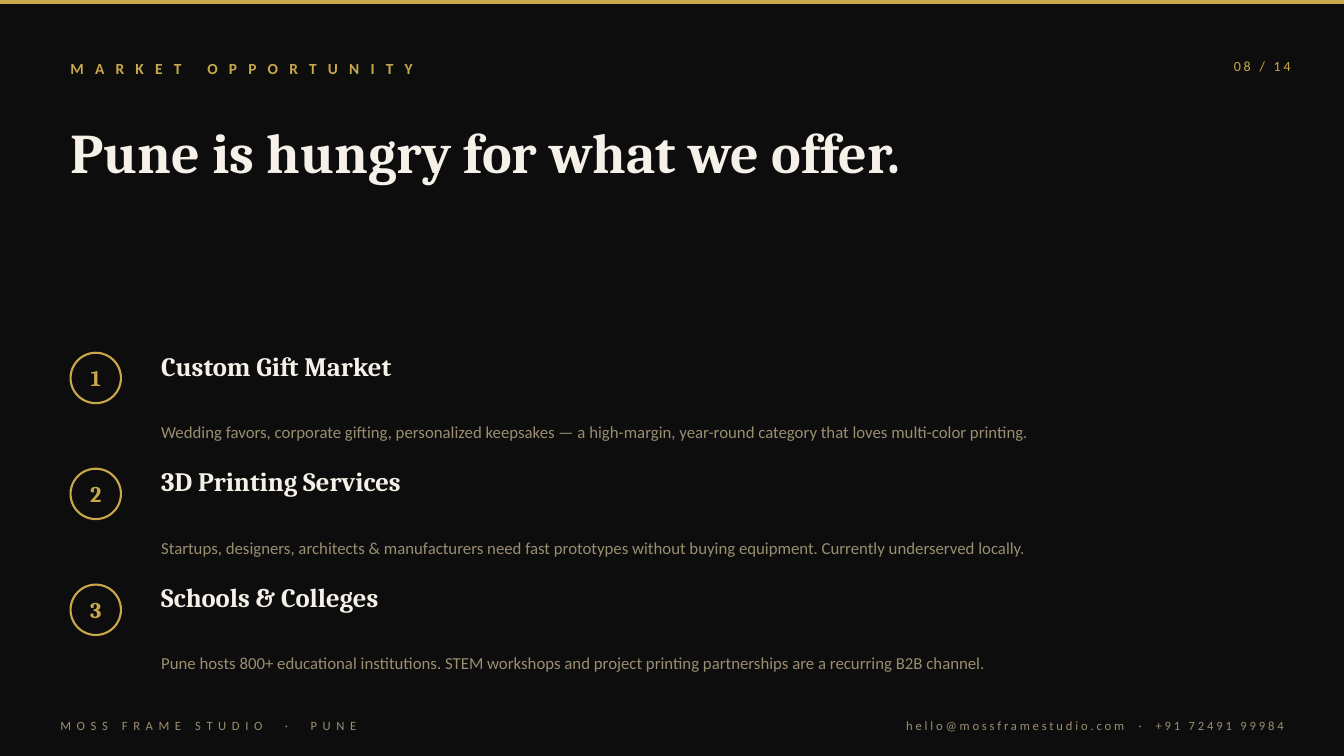
import pptx
import pptx.dml.color
import pptx.enum.shapes
import pptx.enum.text
import pptx.util

PX = 9144  # EMU per px, 100 px to the inch
WIDTH, HEIGHT = 1333, 750
INK, GOLD, CREAM, TAUPE = "0D0D0D", "C9A84C", "F5F1E8", "9A8E70"
SANS, SERIF = "Calibri", "Cambria"
LEFT, CENTER, RIGHT = (pptx.enum.text.PP_ALIGN.LEFT, pptx.enum.text.PP_ALIGN.CENTER,
                       pptx.enum.text.PP_ALIGN.RIGHT)
RECTANGLE = pptx.enum.shapes.MSO_SHAPE.RECTANGLE
OVAL = pptx.enum.shapes.MSO_SHAPE.OVAL

OPPORTUNITIES = [
    ("Custom Gift Market",
     "Wedding favors, corporate gifting, personalized keepsakes — a high-margin, "
     "year-round category that loves multi-color printing."),
    ("3D Printing Services",
     "Startups, designers, architects & manufacturers need fast prototypes without "
     "buying equipment. Currently underserved locally."),
    ("Schools & Colleges",
     "Pune hosts 800+ educational institutions. STEM workshops and project printing "
     "partnerships are a recurring B2B channel."),
]


def color(hex_value):
    return pptx.dml.color.RGBColor.from_string(hex_value)


def emu(*lengths):
    return [pptx.util.Emu(length * PX) for length in lengths]


def write(frame, text, size, font, ink, bold=False, align=LEFT, tracking=0, leading=None):
    """Fill a text frame with one run; tracking is in points."""
    frame.word_wrap = True
    frame.vertical_anchor = pptx.enum.text.MSO_ANCHOR.MIDDLE
    paragraph = frame.paragraphs[0]
    paragraph.alignment = align
    if leading:
        paragraph.line_spacing = leading
    run = paragraph.add_run()
    run.text = text
    run.font.size = pptx.util.Pt(size)
    run.font.name = font
    run.font.bold = bold
    run.font.color.rgb = color(ink)
    if tracking:
        run.font._element.set("spc", str(tracking * 100))


def add_text(slide, box, *content, **style):
    write(slide.shapes.add_textbox(*emu(*box)).text_frame, *content, **style)


def add_figure(slide, kind, box, fill, outline=None):
    figure = slide.shapes.add_shape(kind, *emu(*box))
    figure.shadow.inherit = False
    figure.fill.solid()
    figure.fill.fore_color.rgb = color(fill)
    if outline:
        figure.line.color.rgb = color(outline)
        figure.line.width = pptx.util.Pt(1.5)
    else:
        figure.line.fill.background()
    return figure


def header(slide, x, y, width):
    add_text(slide, (x, y, 800, 35), "MARKET OPPORTUNITY", 11, SANS, GOLD,
             bold=True, tracking=8)
    add_text(slide, (x + width - 90, y, 90, 30), "08 / 14", 10, SANS, GOLD,
             align=RIGHT, tracking=2)
    add_text(slide, (x, y + 40, 1200, 120), "Pune is hungry for what we offer.",
             40, SERIF, CREAM, bold=True)


def opportunity(slide, x, y, width, number, title, detail):
    badge = add_figure(slide, OVAL, (x, y + 10, 50, 50), INK, GOLD).text_frame
    badge.margin_left = badge.margin_right = badge.margin_top = badge.margin_bottom = 0
    write(badge, str(number), 16, SERIF, GOLD, bold=True, align=CENTER)
    text_x, text_width = x + 80, width - 80
    add_text(slide, (text_x, y, text_width, 45), title, 19, SERIF, CREAM, bold=True)
    add_text(slide, (text_x, y + 50, text_width, 70), detail, 12, SANS, TAUPE, leading=1.3)


def opportunity_list(slide, x, y, width, pitch):
    for index, (title, detail) in enumerate(OPPORTUNITIES):
        opportunity(slide, x, y + index * pitch, width, index + 1, title, detail)


def footer(slide, x, y, width):
    add_text(slide, (x, y, 600, 30), "MOSS FRAME STUDIO  ·  PUNE", 9, SANS, TAUPE, tracking=4)
    add_text(slide, (x + width - 600, y, 600, 30),
             "hello@mossframestudio.com  ·  +91 72491 99984", 9, SANS, TAUPE,
             align=RIGHT, tracking=2)


def main():
    deck = pptx.Presentation()
    deck.slide_width, deck.slide_height = emu(WIDTH, HEIGHT)
    slide = deck.slides.add_slide(deck.slide_layouts[6])
    slide.background.fill.solid()
    slide.background.fill.fore_color.rgb = color(INK)
    add_figure(slide, RECTANGLE, (0, 0, WIDTH, 4), GOLD)
    header(slide, 60, 50, 1230)
    opportunity_list(slide, 70, 340, 1180, 115)
    footer(slide, 50, 705, 1233)
    deck.save("out.pptx")


if __name__ == "__main__":
    main()
